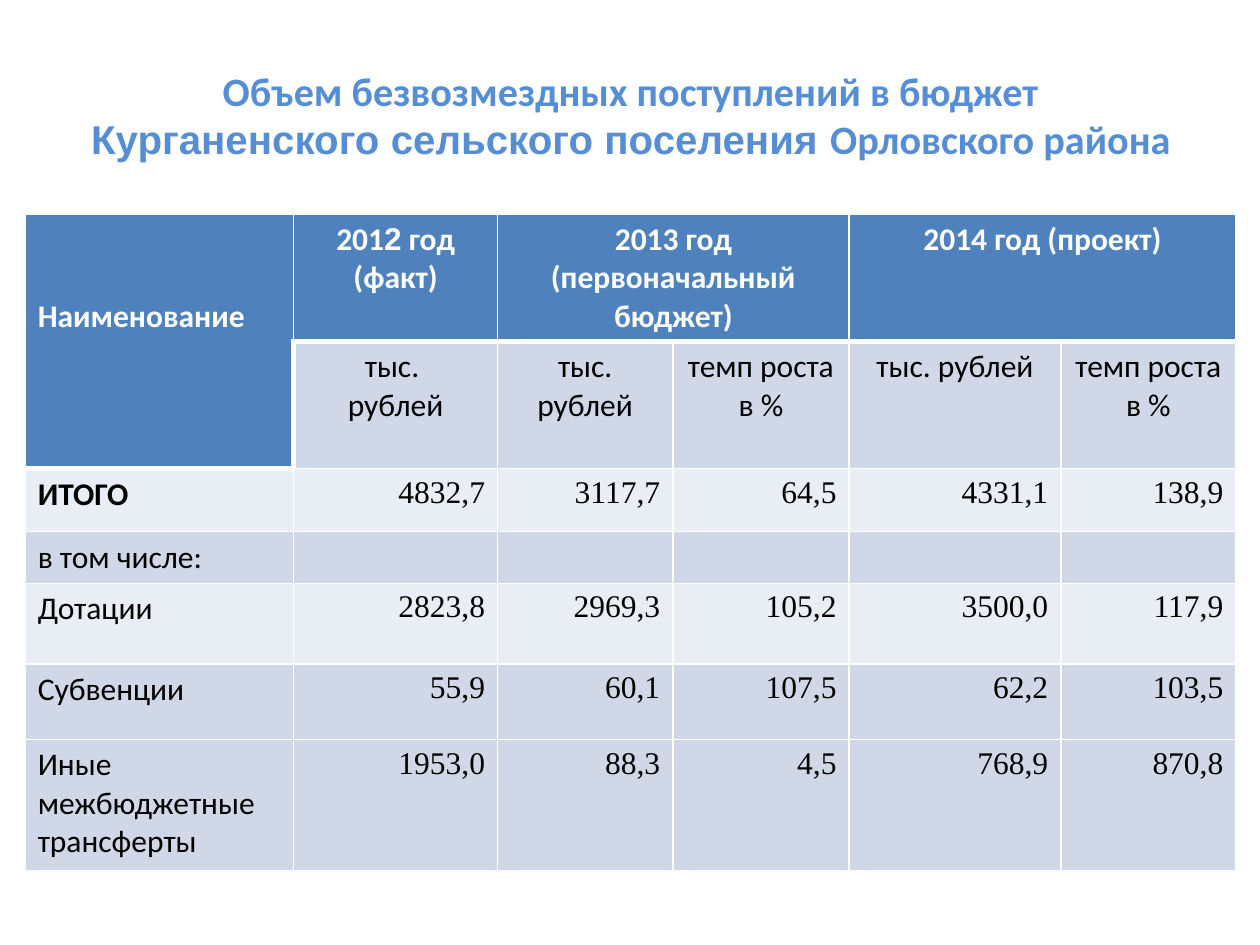
from lxml.etree import SubElement
from pptx import Presentation
from pptx.dml.color import RGBColor
from pptx.enum.text import MSO_ANCHOR, PP_ALIGN
from pptx.oxml.ns import qn
from pptx.util import Inches, Pt

COLORS = {
    "title": "558ED5",
    "header": "4F81BD",
    "dark_band": "D0D8E8",
    "light_band": "E9EDF4",
    "white": "FFFFFF",
    "black": "000000",
}
BODY, ACCENT, FIGURES = "Calibri", "Arial", "Times New Roman"
THIN, THICK = 1, 3


class BudgetSlide:
    """Style and current slide; lengths are units of a 100 x 75 grid."""

    columns, rows = 100, 75

    def __init__(self, deck):
        self.slide = deck.slides.add_slide(deck.slide_layouts[6])
        self.unit_x = deck.slide_width / self.columns
        self.unit_y = deck.slide_height / self.rows

    def x(self, columns):
        return round(columns * self.unit_x)

    def y(self, rows):
        return round(rows * self.unit_y)

    def area(self, left, top, width, height):
        return self.x(left), self.y(top), self.x(width), self.y(height)

    def add_text(self, frame, paragraphs, align, color, size=18, bold=False, font=BODY):
        """Each paragraph is a list of (text, font or None) runs."""
        for index, runs in enumerate(paragraphs):
            paragraph = frame.paragraphs[0] if index == 0 else frame.add_paragraph()
            paragraph.alignment = align
            for text, run_font in runs:
                run = paragraph.add_run()
                run.text = text
                style = {"size": Pt(size), "bold": bold, "name": run_font or font}
                for key, value in style.items():
                    setattr(run.font, key, value)
                run.font.color.rgb = RGBColor.from_string(COLORS[color])

    def title(self, area, runs):
        frame = self.slide.shapes.add_textbox(*self.area(*area)).text_frame
        frame.word_wrap = True
        frame.vertical_anchor = MSO_ANCHOR.MIDDLE
        self.add_text(frame, [runs], PP_ALIGN.CENTER, "title", size=23, bold=True)

    def table(self, left, top, widths, heights):
        area = self.area(left, top, sum(widths), sum(heights))
        table = self.slide.shapes.add_table(len(heights), len(widths), *area).table
        table.first_row = table.horz_banding = False
        for column, width in zip(table.columns, widths):
            column.width = self.x(width)
        for row, height in zip(table.rows, heights):
            row.height = self.y(height)
        return table

    def paint(self, cell, fill, borders):
        properties = cell._tc.get_or_add_tcPr()
        for side, width in zip("LRTB", borders):
            line = SubElement(properties, qn(f"a:ln{side}"), w=str(Pt(width)))
            stroke = SubElement(line, qn("a:solidFill"))
            SubElement(stroke, qn("a:srgbClr"), val=COLORS["white"])
        cell.fill.solid()
        cell.fill.fore_color.rgb = RGBColor.from_string(COLORS[fill])


def is_header(row, column):
    return row == 0 or (row == 1 and column == 0)


def border_widths(row, column):
    """Thick lines separate header cells from body cells."""
    here = is_header(row, column)
    neighbours = ((row, column - 1), (row, column + 1), (row - 1, column), (row + 1, column))
    widths = [THICK if min(cell) >= 0 and is_header(*cell) != here else THIN
              for cell in neighbours]
    if (row, column) == (0, 0):
        widths[3] = THICK
    return widths


def main():
    deck = Presentation()
    deck.slide_width, deck.slide_height = Inches(10), Inches(7.5)
    page = BudgetSlide(deck)

    # Heading
    page.title((5.1, 3.6, 90, 11), [
        ("Объем безвозмездных поступлений в бюджет ", None),
        ("Курганенского сельского поселения ", ACCENT),
        ("Орловского района", None),
    ])

    # Table grid, fills and borders
    widths = [21.3, 16.2, 13.9, 14, 16.8, 13.9]
    heights = [10.1, 9.7, 5, 4.1, 6.4, 6, 10.4]
    bands = ["header", "dark_band", "light_band", "dark_band",
             "light_band", "dark_band", "dark_band"]
    table = page.table(2, 17, widths, heights)
    for row, band in enumerate(bands):
        for column in range(len(widths)):
            fill = "header" if is_header(row, column) else band
            page.paint(table.cell(row, column), fill, border_widths(row, column))
    for start, end in (((0, 0), (1, 0)), ((0, 2), (0, 3)), ((0, 4), (0, 5))):
        table.cell(*start).merge(table.cell(*end))

    # Header: name column and years
    name = table.cell(0, 0)
    name.margin_top = page.y(6.6)
    page.add_text(name.text_frame, [[("Наименование", None)]], PP_ALIGN.LEFT, "white", bold=True)
    years = {
        1: [("201", None), ("2", ACCENT), (" год (факт)", None)],
        2: [("2013 год (первоначальный бюджет)", None)],
        4: [("2014 год (проект)", None)],
    }
    for column, runs in years.items():
        page.add_text(table.cell(0, column).text_frame, [runs], PP_ALIGN.CENTER, "white", bold=True)

    # Units under each year
    amount, growth = ["тыс. рублей"], ["темп роста в %"]
    units = [["тыс. ", "рублей"], amount, growth, amount, growth]
    for column, lines in enumerate(units, 1):
        page.add_text(table.cell(1, column).text_frame, [[(line, None)] for line in lines],
                      PP_ALIGN.CENTER, "black")

    # Receipts by kind
    receipts = [
        ("ИТОГО", "4832,7", "3117,7", "64,5", "4331,1", "138,9"),
        ("в том числе:",),
        ("Дотации", "2823,8", "2969,3", "105,2", "3500,0", "117,9"),
        ("Субвенции", "55,9", "60,1", "107,5", "62,2", "103,5"),
        ("Иные межбюджетные трансферты", "1953,0", "88,3", "4,5", "768,9", "870,8"),
    ]
    for row, (kind, *figures) in enumerate(receipts, 2):
        page.add_text(table.cell(row, 0).text_frame, [[(kind, None)]], PP_ALIGN.LEFT,
                      "black", bold=kind == "ИТОГО")
        for column, figure in enumerate(figures, 1):
            page.add_text(table.cell(row, column).text_frame, [[(figure, None)]],
                          PP_ALIGN.RIGHT, "black", font=FIGURES)

    deck.save("out.pptx")


if __name__ == "__main__":
    main()
